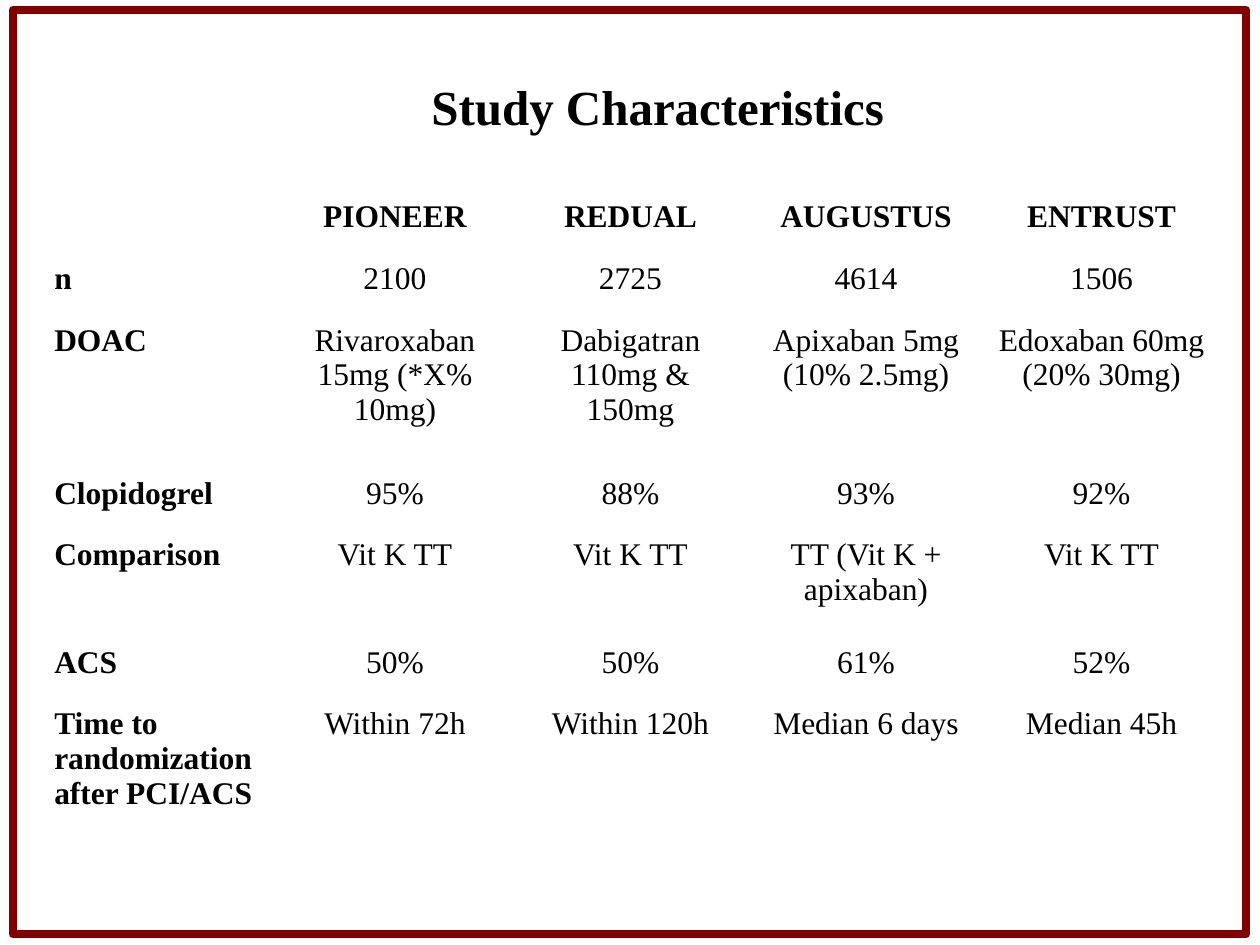
from pptx import Presentation
from pptx.dml.color import RGBColor
from pptx.enum.shapes import MSO_SHAPE
from pptx.enum.text import MSO_ANCHOR, PP_ALIGN
from pptx.util import Pt

RECTANGLE = MSO_SHAPE.RECTANGLE
LEFT, CENTER = PP_ALIGN.LEFT, PP_ALIGN.CENTER
TOP = MSO_ANCHOR.TOP
TITLE_ONLY = 5
FONT = "Times New Roman"
BLACK, WHITE, MAROON = "000000", "FFFFFF", "800000"

STUDIES = [
    ["", "PIONEER", "REDUAL", "AUGUSTUS", "ENTRUST"],
    ["n", "2100", "2725", "4614", "1506"],
    ["DOAC", "Rivaroxaban 15mg (*X% 10mg)", "Dabigatran 110mg & 150mg",
     "Apixaban 5mg (10% 2.5mg)", "Edoxaban 60mg (20% 30mg)"],
    ["Clopidogrel", "95%", "88%", "93%", "92%"],
    ["Comparison", "Vit K TT", "Vit K TT", "TT (Vit K + apixaban)", "Vit K TT"],
    ["ACS", "50%", "50%", "61%", "52%"],
    ["Time to randomization after PCI/ACS", "Within 72h", "Within 120h",
     "Median 6 days", "Median 45h"],
]
ROW_HEIGHTS = [35.4, 35.4, 87.4, 35.4, 61.2, 35.4, 87.4]


def color(value):
    return RGBColor.from_string(value)


def points(box):
    return [Pt(length) for length in box]


def write(frame, text, size, bold, align):
    para = frame.paragraphs[0]
    para.alignment = align
    if not text:
        return
    span = para.add_run()
    span.text = text
    span.font.name = FONT
    span.font.size = Pt(size)
    span.font.bold = bold
    span.font.color.rgb = color(BLACK)


def add_border(page, box):
    border = page.shapes.add_shape(RECTANGLE, *points(box))
    border.shadow.inherit = False
    border.fill.background()
    border.line.color.rgb = color(MAROON)
    border.line.width = Pt(4.5)


def add_title(page, box, text):
    title = page.shapes.title
    title.left, title.top, title.width, title.height = points(box)
    title.text_frame.vertical_anchor = TOP
    write(title.text_frame, text, 28, True, CENTER)


def add_study_table(page, box, rows, heights):
    table = page.shapes.add_table(len(rows), len(rows[0]), *points(box)).table
    table.first_row = table.horz_banding = False
    for column in table.columns:
        column.width = Pt(box[2] / len(rows[0]))
    for r, (texts, height) in enumerate(zip(rows, heights)):
        table.rows[r].height = Pt(height)
        for c, text in enumerate(texts):
            cell = table.cell(r, c)
            cell.fill.background()
            # Headings in the first row and column are bold
            write(cell.text_frame, text, 18, r == 0 or c == 0,
                  CENTER if c else LEFT)


def main():
    deck = Presentation()
    deck.slide_width, deck.slide_height = Pt(720), Pt(540)
    page = deck.slides.add_slide(deck.slide_layouts[TITLE_ONLY])
    page.background.fill.solid()
    page.background.fill.fore_color.rgb = color(WHITE)

    add_border(page, (7.2, 5.8, 705, 528))
    add_study_table(page, (23.8, 110.2, 673, sum(ROW_HEIGHTS)),
                    STUDIES, ROW_HEIGHTS)
    add_title(page, (167, 40.3, 417.6, 41), "Study Characteristics")

    deck.save("out.pptx")


if __name__ == "__main__":
    main()
